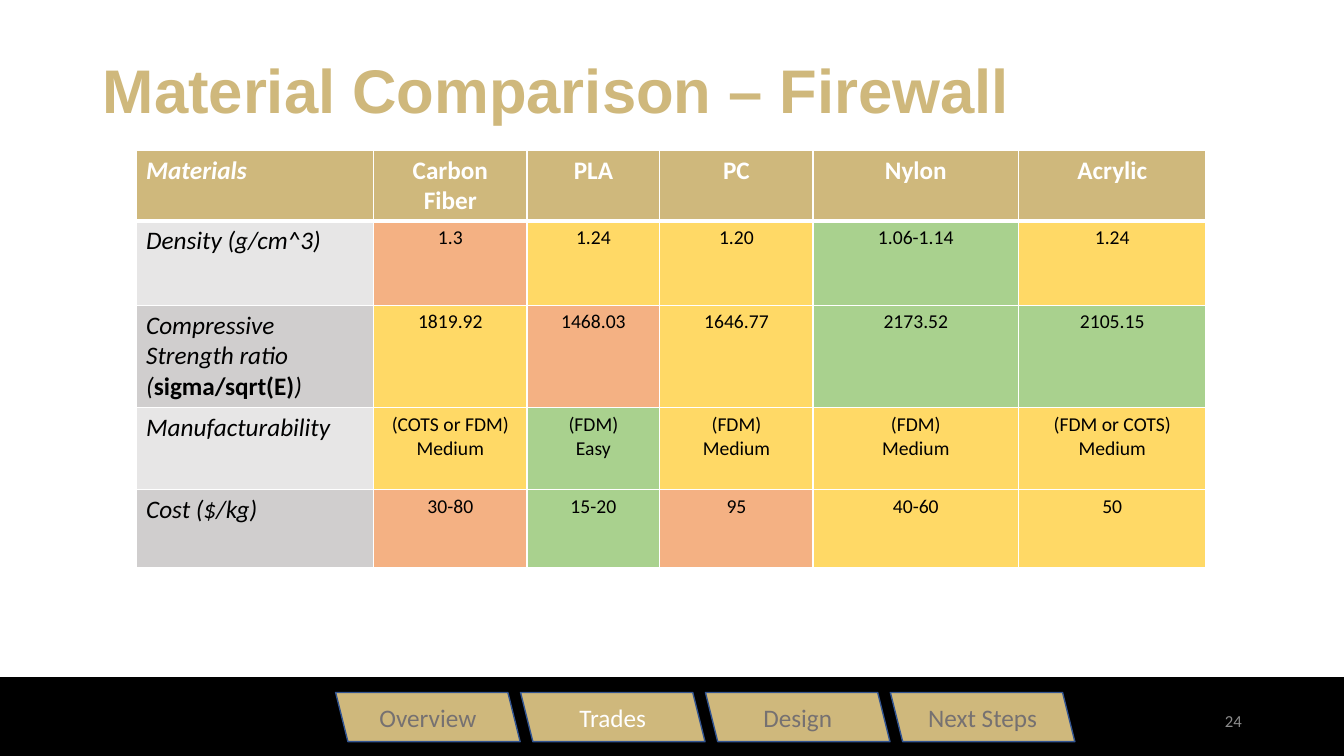
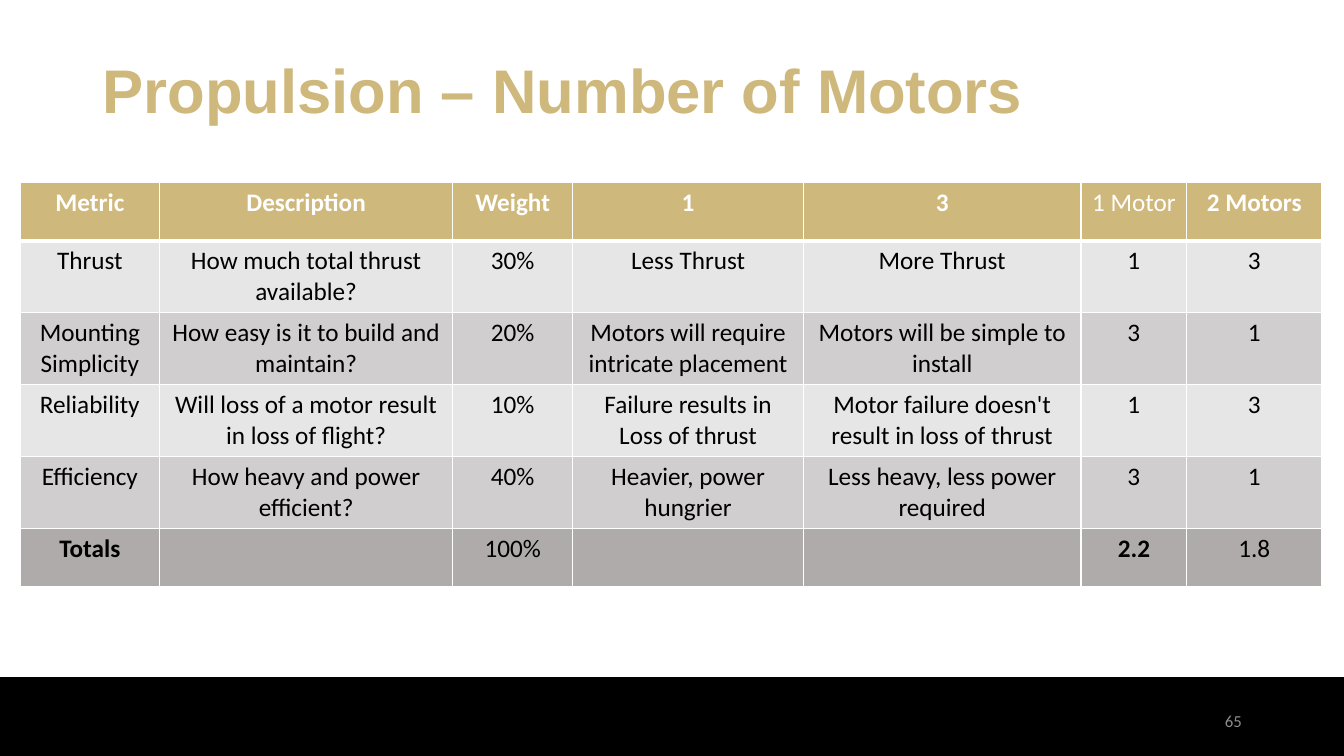
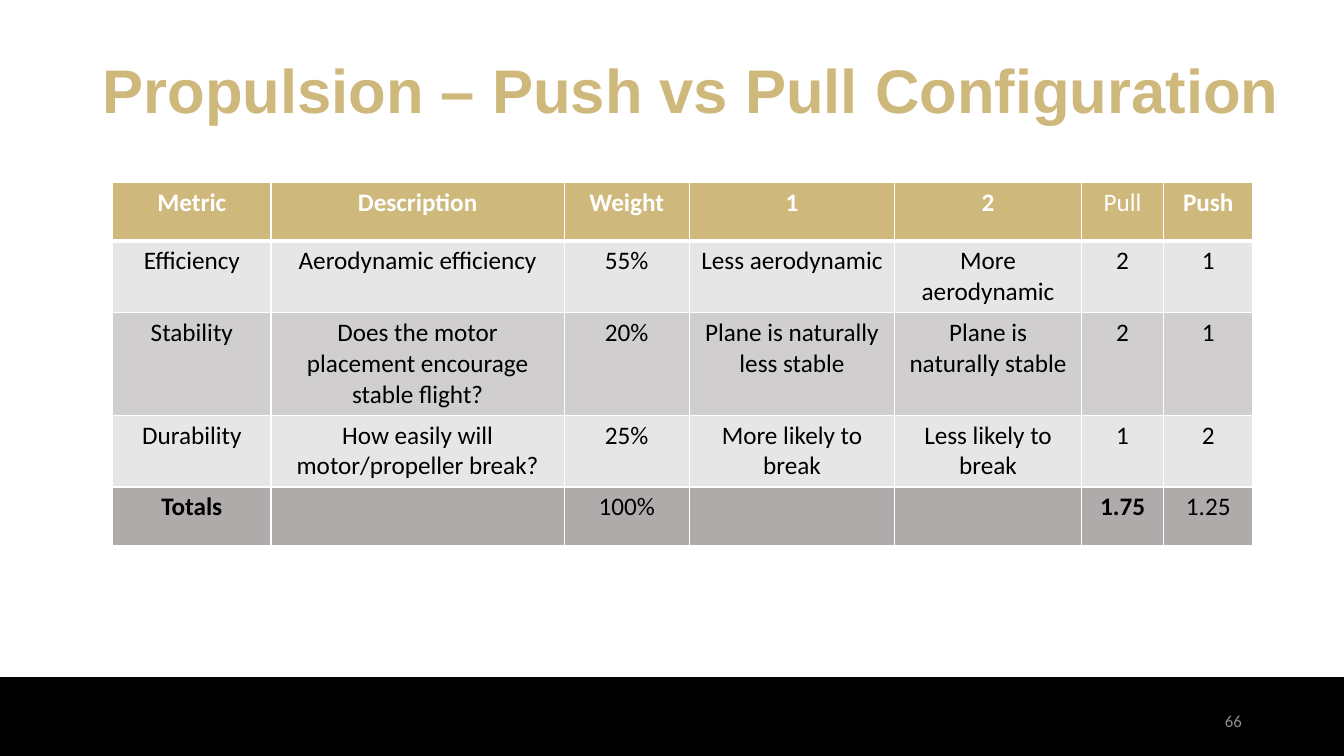
from lxml.etree import SubElement as Sub
from pptx import Presentation as Deck
from pptx.dml.color import RGBColor as Rgb
from pptx.enum.shapes import MSO_SHAPE as Kind
from pptx.enum.text import MSO_ANCHOR as Anchor, PP_ALIGN as Align
from pptx.oxml.ns import qn
from pptx.util import Cm, Pt

HUES = {
    "gold": "CFB87C", "white": "FFFFFF", "black": "000000", "edge": "325491",
    "dim": "767171", "faint": "8C8C8C",
    "light": "E7E6E6", "mid": "D0CECE", "dark": "AFABAB",
    "r": "F4B183", "y": "FFD966", "g": "A9D18E",
}
TITLE = {"size": Pt(44), "name": "Arial", "bold": True}
BODY = {"size": Pt(18), "name": "Calibri", "bold": False, "italic": False}
SMALL = BODY | {"size": Pt(14)}
HEAD = BODY | {"bold": True}
LABEL = BODY | {"italic": True}
NUMBER = BODY | {"size": Pt(12)}
TABS = ["Overview", "Trades", "Design", "Next Steps"]


def hue(name):
    return Rgb.from_string(HUES[name])


def apply(item, style):
    for key, value in style.items():
        setattr(item, key, value)


class Show:
    def __init__(self):
        self.deck = Deck()
        apply(self.deck, {"slide_width": Cm(33.87), "slide_height": Cm(19.05)})

    def page(self, title, number, width=29.21):
        """Start a slide with its band, title and number."""
        self.slide = self.deck.slides.add_slide(self.deck.slide_layouts[6])
        self.shape(Kind.RECTANGLE, (0, 17.07, 33.87, 1.98), "black", "black")
        line = self.text((2.34, 0.51, width, 3.68), title, TITLE, "gold")
        line.line_spacing = 0.9
        self.text((23.93, 17.65, 7.62, 1.02), number, NUMBER, "faint", Align.RIGHT)

    def shape(self, kind, place, fill, edge):
        form = self.slide.shapes.add_shape(kind, *map(Cm, place))
        form.shadow.inherit = False
        form.fill.solid()
        form.fill.fore_color.rgb = hue(fill)
        form.line.color.rgb = hue(edge)
        form.line.width = Pt(1)
        return form

    def words(self, par, text, style, tint, align=Align.LEFT):
        """Fill a paragraph with a string or with (text, style) parts."""
        par.alignment = align
        for part, more in [(text, {})] if isinstance(text, str) else text:
            run = par.add_run()
            run.text = part
            apply(run.font, style | more)
            run.font.color.rgb = hue(tint)
        return par

    def text(self, place, text, style, tint, align=Align.LEFT):
        frame = self.slide.shapes.add_textbox(*map(Cm, place)).text_frame
        apply(frame, {"word_wrap": True, "vertical_anchor": Anchor.MIDDLE})
        return self.words(frame.paragraphs[0], text, style, tint, align)

    def tabs(self, active):
        for i, name in enumerate(TABS):
            place = (8.46 + 4.66 * i, 17.45, 4.65, 1.24)
            tab = self.shape(Kind.PARALLELOGRAM, place, "gold", "edge")
            tab.element.spPr.xfrm.set("flipH", "1")
            tab.text_frame.vertical_anchor = Anchor.MIDDLE
            tint = "white" if name == active else "dim"
            self.words(tab.text_frame.paragraphs[0], name, BODY, tint, Align.CENTER)

    def grid(self, left, top, cols, rows):
        size = map(Cm, (left, top, sum(cols), sum(rows)))
        table = self.slide.shapes.add_table(len(rows), len(cols), *size).table
        table.horz_banding = False
        for col, width in zip(table.columns, cols):
            col.width = Cm(width)
        for row, height in zip(table.rows, rows):
            row.height = Cm(height)
        return table

    def cell(self, table, row, col, text, fill, style, align=Align.CENTER):
        cell = table.cell(row, col)
        sides = {"lnL": 1, "lnR": 1, "lnT": 3 if row == 1 else 1, "lnB": 1 if row else 3}
        for side, width in sides.items():
            line = Sub(cell._tc.get_or_add_tcPr(), qn(f"a:{side}"), w=str(int(Pt(width))))
            Sub(Sub(line, qn("a:solidFill")), qn("a:srgbClr"), val=HUES["white"])
        cell.fill.solid()
        cell.fill.fore_color.rgb = hue(fill)
        frame = cell.text_frame
        tint = "black" if row else "white"
        for i, part in enumerate(text.split("\n") if isinstance(text, str) else [text]):
            par = frame.add_paragraph() if i else frame.paragraphs[0]
            if part:
                self.words(par, part, style, tint, align)

    def rated(self, place, cols, rows, data, marks):
        """Table of materials, each value filled by its rating."""
        table = self.grid(*place, cols, rows)
        for r, line in enumerate(data):
            for c, text in enumerate(line):
                if c == 0:
                    fill = ("light" if r % 2 else "mid") if r else "gold"
                    style = LABEL | {"bold": r == 0}
                    self.cell(table, r, c, text, fill, style, Align.LEFT)
                else:
                    fill = marks[r - 1][c - 1] if r else "gold"
                    self.cell(table, r, c, text, fill, SMALL if r else HEAD)

    def trade(self, left, cols, rows, data):
        """Weighted score table with a row of totals; column 5 wins."""
        table = self.grid(left, 4.6, cols, rows)
        last = len(data) - 1
        for r, line in enumerate(data):
            fill = "gold" if r == 0 else "dark" if r == last else "light" if r % 2 else "mid"
            for c, text in enumerate(line):
                bold = (r == 0 and c != 5) or (r == last and c in (0, 5))
                self.cell(table, r, c, text, fill, BODY | {"bold": bold})


def main():
    show = Show()

    # Materials
    show.page("Material Comparison – Firewall", "24")
    ratio = [("Compressive Strength ratio (", {}),
             ("sigma/sqrt(E)", {"bold": True, "italic": False}), (")", {})]
    show.rated(
        (3.43, 3.78), [5.99, 3.86, 3.35, 3.86, 5.18, 4.72],
        [1.78, 2.13, 2.58, 2.06, 1.96],
        [["Materials", "Carbon Fiber", "PLA", "PC", "Nylon", "Acrylic"],
         ["Density (g/cm^3)", "1.3", "1.24", "1.20", "1.06-1.14", "1.24"],
         [ratio, "1819.92", "1468.03", "1646.77", "2173.52", "2105.15"],
         ["Manufacturability", "(COTS or FDM)\nMedium", "(FDM)\nEasy",
          "(FDM)\nMedium", "(FDM)\nMedium", "(FDM or COTS)\nMedium"],
         ["Cost ($/kg)", "30-80", "15-20", "95", "40-60", "50"]],
        ["ryygy", "yrygg", "ygyyy", "rgryy"])
    show.tabs("Trades")

    # Number of motors
    show.page("Propulsion – Number of Motors", "65")
    show.trade(
        0.51, [3.51, 7.39, 3.02, 5.82, 6.99, 2.67, 3.4],
        [1.47] + [1.81] * 4 + [1.47],
        [["Metric", "Description", "Weight", "1", "3", "1 Motor", "2 Motors"],
         ["Thrust", "How much total thrust available?", "30%",
          "Less Thrust", "More Thrust", "1", "3"],
         ["Mounting Simplicity", "How easy is it to build and maintain?", "20%",
          "Motors will require intricate placement",
          "Motors will be simple to install", "3", "1"],
         ["Reliability", "Will loss of a motor result in loss of flight?", "10%",
          "Failure results in Loss of thrust",
          "Motor failure doesn't result in loss of thrust", "1", "3"],
         ["Efficiency", "How heavy and power efficient?", "40%",
          "Heavier, power hungrier", "Less heavy, less power required", "3", "1"],
         ["Totals", "", "100%", "", "", "2.2", "1.8"]])

    # Push or pull
    show.page("Propulsion – Push vs Pull Configuration", "66", 30.58)
    show.trade(
        2.84, [3.99, 7.39, 3.15, 5.18, 4.7, 2.08, 2.24],
        [1.47, 1.81, 2.58, 1.81, 1.47],
        [["Metric", "Description", "Weight", "1", "2", "Pull", "Push"],
         ["Efficiency", "Aerodynamic efficiency", "55%",
          "Less aerodynamic", "More aerodynamic", "2", "1"],
         ["Stability", "Does the motor placement encourage stable flight?", "20%",
          "Plane is naturally less stable", "Plane is naturally stable", "2", "1"],
         ["Durability", "How easily will motor/propeller break?", "25%",
          "More likely to break", "Less likely to break", "1", "2"],
         ["Totals", "", "100%", "", "", "1.75", "1.25"]])

    show.deck.save("out.pptx")


if __name__ == "__main__":
    main()
